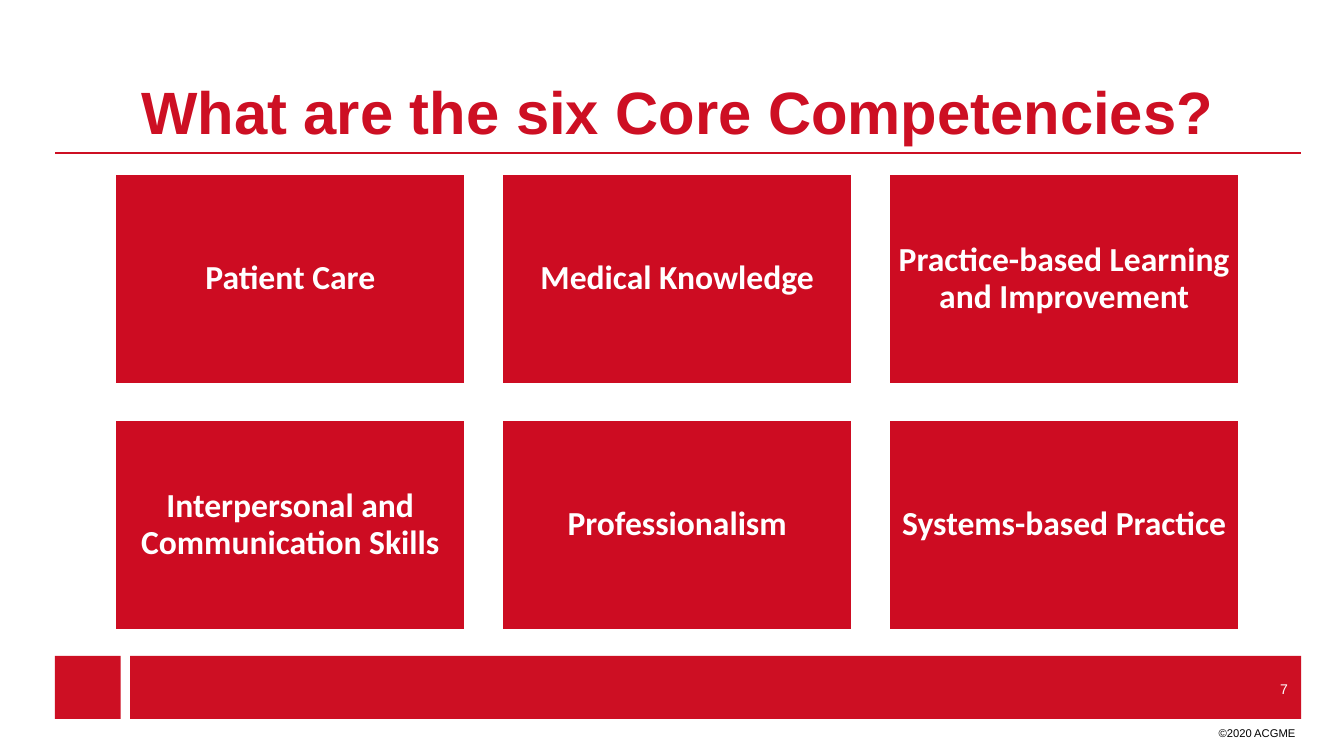
from pptx import Presentation
from pptx.dml.color import RGBColor
from pptx.enum import shapes, text
from pptx.oxml.ns import qn
from pptx.util import Cm, Pt
from lxml import etree

BRAND_RED = RGBColor(0xCD, 0x0F, 0x23)
CARD_RED = RGBColor(0xCD, 0x0C, 0x22)
WHITE = RGBColor(0xFF, 0xFF, 0xFF)
BLACK = RGBColor(0x00, 0x00, 0x00)

COMPETENCIES = [
    "Patient Care",
    "Medical Knowledge",
    "Practice-based Learning and Improvement",
    "Interpersonal and Communication Skills",
    "Professionalism",
    "Systems-based Practice",
]


def write(shape, wording, size, color, align, anchor, font="Arial", bold=False):
    frame = shape.text_frame
    frame.word_wrap = True
    frame.vertical_anchor = anchor
    paragraph = frame.paragraphs[0]
    paragraph.text = wording
    paragraph.alignment = align
    paragraph.font.name = font
    paragraph.font.size = Pt(size)
    paragraph.font.bold = bold
    paragraph.font.color.rgb = color
    return frame


def add_block(slide, left, top, width, height, color):
    block = slide.shapes.add_shape(
        shapes.MSO_SHAPE.RECTANGLE, Cm(left), Cm(top), Cm(width), Cm(height))
    block.shadow.inherit = False
    block.fill.solid()
    block.fill.fore_color.rgb = color
    block.line.fill.background()
    return block


def add_label(slide, left, top, width, height, *style, **font_style):
    label = slide.shapes.add_textbox(Cm(left), Cm(top), Cm(width), Cm(height))
    write(label, *style, **font_style)


def add_header(slide, left, top, width, height):
    """Title standing on a thin rule."""
    add_label(slide, left, top, width, height, "What are the six Core Competencies?",
              32, BRAND_RED, text.PP_ALIGN.CENTER, text.MSO_ANCHOR.BOTTOM, bold=True)
    bottom = Cm(top + height)
    rule = slide.shapes.add_connector(
        shapes.MSO_CONNECTOR.STRAIGHT, Cm(left), bottom, Cm(left + width), bottom)
    rule.line.color.rgb = BRAND_RED
    rule.line.width = Pt(0.75)
    etree.SubElement(rule._element.spPr, qn("a:effectLst"))


def add_card_grid(slide, left, top, width, height, columns=3, rows=2, gap=0.66):
    card_width = (width - gap * (columns - 1)) / columns
    card_height = (height - gap * (rows - 1)) / rows
    for index, competency in enumerate(COMPETENCIES):
        row, column = divmod(index, columns)
        card = add_block(slide, left + column * (card_width + gap),
                         top + row * (card_height + gap),
                         card_width, card_height, CARD_RED)
        card.line.color.rgb = WHITE
        card.line.width = Pt(2)
        frame = write(card, competency, 18, WHITE, text.PP_ALIGN.CENTER,
                      text.MSO_ANCHOR.MIDDLE, font="Calibri", bold=True)
        frame.margin_left = frame.margin_right = Cm(0.18)
        frame.margin_top = frame.margin_bottom = Cm(0.18)
        frame.paragraphs[0].line_spacing = 0.9


def add_footer(slide, left, top, width, height):
    """Small block and long bar, with the page number and copyright line."""
    square_width, gap = 1.24, 0.18
    bar_offset = square_width + gap
    right = left + width
    add_block(slide, left, top, square_width, height, BRAND_RED)
    add_block(slide, left + bar_offset, top, width - bar_offset, height, BRAND_RED)
    add_label(slide, right - 2.11, top + 0.3, 2.11, 0.64, "7",
              7.5, WHITE, text.PP_ALIGN.RIGHT, text.MSO_ANCHOR.MIDDLE)
    add_label(slide, right - 2.07, top + height + 0.02, 2.21, 0.51, "©2020 ACGME",
              6, BLACK, text.PP_ALIGN.RIGHT, text.MSO_ANCHOR.TOP)


def main():
    presentation = Presentation()
    presentation.slide_width = Cm(25.4)
    presentation.slide_height = Cm(14.29)
    slide = presentation.slides.add_slide(presentation.slide_layouts[6])
    add_header(slide, 1.04, 0.41, 23.55, 2.48)
    add_card_grid(slide, 2.16, 3.28, 21.28, 8.64)
    add_footer(slide, 1.04, 12.4, 23.55, 1.19)
    presentation.save("out.pptx")


if __name__ == "__main__":
    main()
